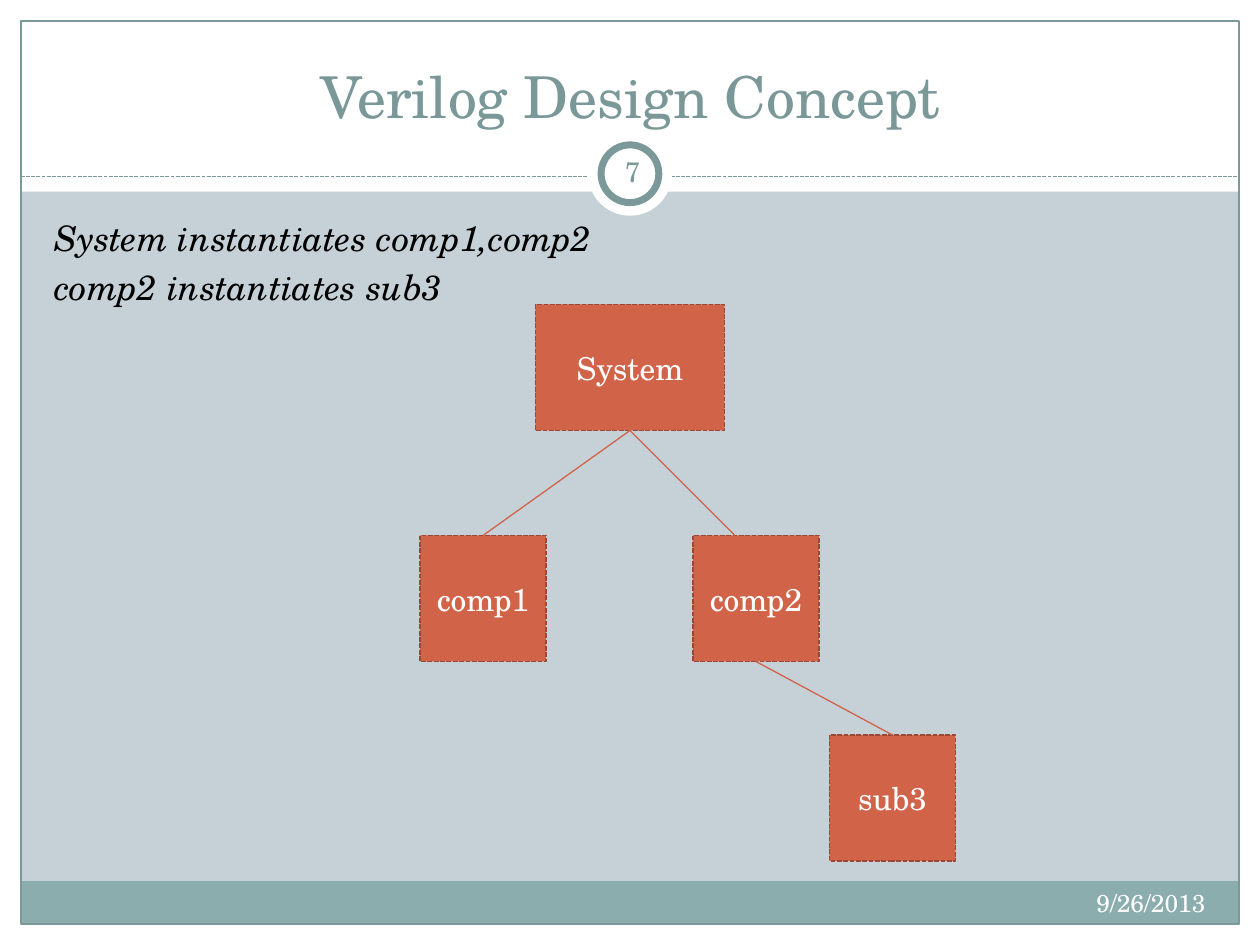
from lxml import etree
from pptx import Presentation
from pptx.dml.color import RGBColor
from pptx.enum import dml, shapes, text
from pptx.oxml.ns import qn
from pptx.util import Pt

COLORS = {
    "background": "C5D1D7", "white": "FFFFFF", "band": "8CADAE",
    "frame": "7C999A", "title": "7B9899", "black": "000000",
    "module": "D16349", "module_edge": "9B4936",
}
FONT = "TeX Gyre Schola"
WIDTH, HEIGHT = 720, 540
MARGIN = 12


def rgb(name):
    return RGBColor.from_string(COLORS[name])


def set_line(line, color, width, dashed=False):
    line.color.rgb = rgb(color)
    line.width = Pt(width)
    if dashed:
        line.dash_style = dml.MSO_LINE.SQUARE_DOT


def write(frame, lines, size, color, align="LEFT", anchor="TOP",
          inset=None, space=0, italic=False):
    frame.word_wrap = True
    frame.vertical_anchor = getattr(text.MSO_ANCHOR, anchor)
    if inset is not None:
        for side in ("left", "right", "top", "bottom"):
            setattr(frame, f"margin_{side}", Pt(inset))
    font_format = {"name": FONT, "size": Pt(size), "italic": italic}
    for number, line in enumerate(lines):
        paragraph = frame.add_paragraph() if number else frame.paragraphs[0]
        paragraph.alignment = getattr(text.PP_ALIGN, align)
        paragraph.space_before = Pt(space)
        run = paragraph.add_run()
        run.text = line
        for key, value in font_format.items():
            setattr(run.font, key, value)
        run.font.color.rgb = rgb(color)


def add_text(slide, box, lines, size, color, **layout):
    label = slide.shapes.add_textbox(*map(Pt, box))
    write(label.text_frame, lines, size, color, **layout)


def add_block(slide, box, fill=None, edge=None, kind="RECTANGLE"):
    block = slide.shapes.add_shape(getattr(shapes.MSO_SHAPE, kind), *map(Pt, box))
    block.shadow.inherit = False
    if fill:
        block.fill.solid()
        block.fill.fore_color.rgb = rgb(fill)
    else:
        block.fill.background()
    if edge:
        set_line(block.line, *edge)
    else:
        block.line.fill.background()
    return block


def add_link(slide, start, end, *style):
    link = slide.shapes.add_connector(
        shapes.MSO_CONNECTOR.STRAIGHT, *map(Pt, (*start, *end)))
    set_line(link.line, *style)
    etree.SubElement(link._element.spPr, qn("a:effectLst"))


def add_frame(slide, box):
    left, top, width, height = box
    right, bottom = left + width, top + height
    # White margins and header
    for margin in ((0, bottom, WIDTH, HEIGHT - bottom), (0, 0, WIDTH, 109.5),
                   (0, 0, left, HEIGHT), (right, 0, WIDTH - right, HEIGHT)):
        add_block(slide, margin, "white")
    # Footer band, outline and header rule
    add_block(slide, (left, bottom - 24.5, width, 24.5), "band")
    add_block(slide, box, edge=("frame", 0.75))
    rule = top + 88.8
    add_link(slide, (left, rule), (right, rule), "frame", 0.75, True)
    # Page number badge
    center_x, center_y = left + width / 2, top + 87.3
    for diameter, edge in ((48, None), (33, ("frame", 4))):
        add_block(slide, (center_x - diameter / 2, center_y - diameter / 2,
                          diameter, diameter), "white", edge, "OVAL")


def add_captions(slide, box):
    left, top, width, height = box
    right, bottom = left + width, top + height
    add_text(slide, (left, top, width, 60), ["Verilog Design Concept"],
             33, "title", align="CENTER", anchor="BOTTOM")
    add_text(slide, (right - 240, bottom - 28.5, 240, 28.5), ["9/26/2013"],
             14, "white", align="RIGHT")
    add_text(slide, (left + 319.5, top + 62.6, 36, 34.6), ["7"],
             16, "frame", align="CENTER", anchor="MIDDLE", inset=3.6)
    add_text(slide, (left, top + 102, width, 360),
             ["System instantiates comp1,comp2", "comp2 instantiates sub3"],
             20, "black", space=4, italic=True)


def add_hierarchy(slide, box):
    left, top, _, _ = box
    side = 72
    modules = {
        "System": (66, 0, 108), "comp1": (0, 132, side),
        "sub3": (234, 246, side), "comp2": (156, 132, side),
    }
    # Module boxes
    for name, (x, y, width) in modules.items():
        module = add_block(slide, (left + x, top + y, width, side),
                           "module", ("module_edge", 0.9, True))
        write(module.text_frame, [name], 18, "white",
              align="CENTER", anchor="MIDDLE")

    # Instantiation links; the one to comp2 lands left of its centre
    for parent, child, shift in (("System", "comp1", 0), ("System", "comp2", -12),
                                 ("comp2", "sub3", 0)):
        (px, py, pw), (cx, cy, cw) = modules[parent], modules[child]
        add_link(slide, (left + px + pw / 2, top + py + side),
                 (left + cx + cw / 2 + shift, top + cy), "module", 0.75)


def main():
    deck = Presentation()
    deck.slide_width, deck.slide_height = Pt(WIDTH), Pt(HEIGHT)
    slide = deck.slides.add_slide(deck.slide_layouts[6])
    slide.background.fill.solid()
    slide.background.fill.fore_color.rgb = rgb("background")
    add_frame(slide, (MARGIN, MARGIN, WIDTH - 2 * MARGIN, HEIGHT - 2 * MARGIN))
    add_captions(slide, (24, 18, 672, 514.5))
    add_hierarchy(slide, (240, 174, 306, 318))
    deck.save("out.pptx")


if __name__ == "__main__":
    main()
